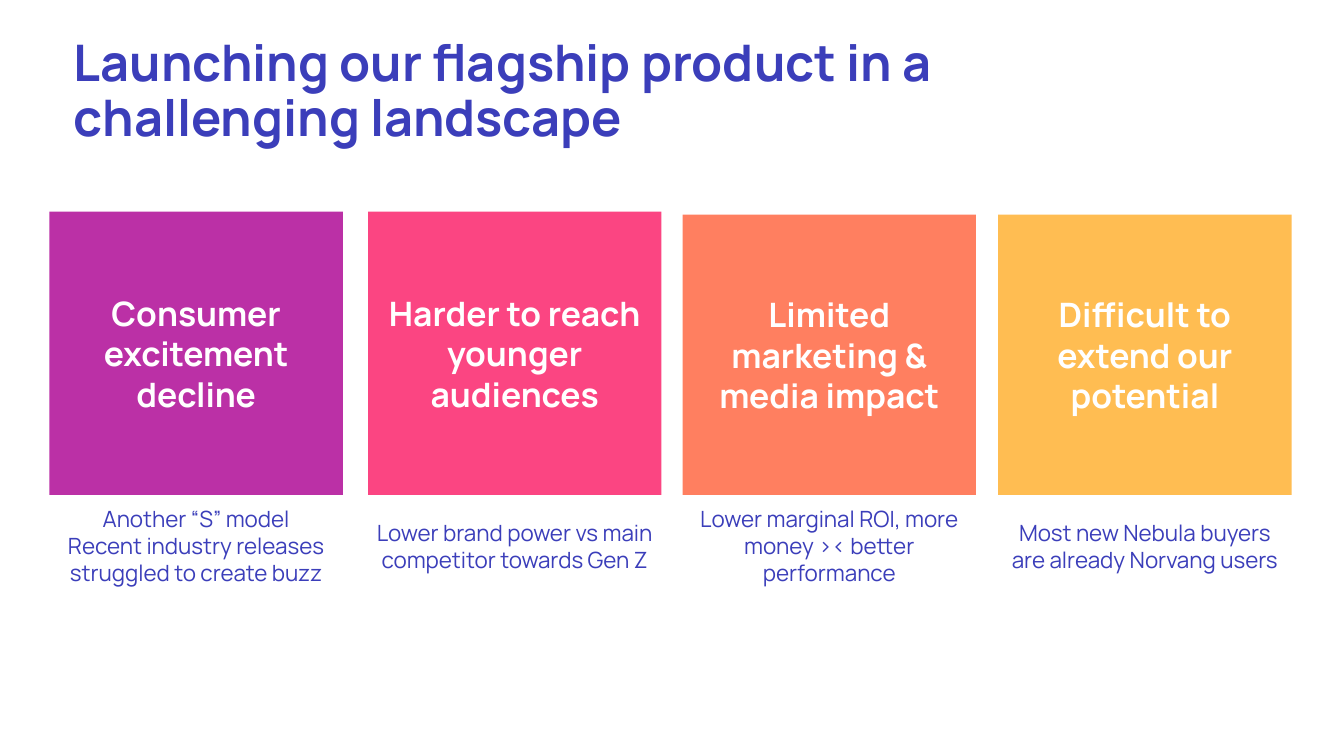
import pptx
import pptx.util
import pptx.dml.color
import pptx.enum.shapes
import pptx.enum.text

Inches = pptx.util.Inches
ALIGN = pptx.enum.text.PP_ALIGN
ANCHOR = pptx.enum.text.MSO_ANCHOR

COLORS = {
    "text": "3B3EBA",
    "white": "FFFFFF",
    "purple": "BB30A6",
    "pink": "FB4582",
    "coral": "FF7F60",
    "yellow": "FFBD52",
}

CARD_WIDTH = 2.91
CARD_BOTTOM = 4.91

# left, top, colour, heading, caption
CHALLENGES = [
    (0.49, 2.1, "purple", "Consumer excitement decline",
     "Another “S” model\nRecent industry releases struggled to create buzz"),
    (3.65, 2.1, "pink", "Harder to reach younger audiences",
     "Lower brand power vs main competitor towards Gen Z"),
    (6.77, 2.13, "coral", "Limited marketing & media impact",
     "Lower marginal ROI, more money >< better performance"),
    (9.9, 2.13, "yellow", "Difficult to extend our potential",
     "Most new Nebula buyers are already Norvang users"),
]


def rgb(name):
    return pptx.dml.color.RGBColor.from_string(COLORS[name])


class SlideBuilder:
    font = "Manrope"

    def __init__(self, slide):
        self.slide = slide

    def set_text(self, sp, text, size, color, bold=False, align=ALIGN.CENTER,
                 anchor=ANCHOR.MIDDLE):
        tf = sp.text_frame
        tf.text = text
        tf.word_wrap = True
        tf.vertical_anchor = anchor
        for p in tf.paragraphs:
            p.alignment = align
            for r in p.runs:
                r.font.name = self.font
                r.font.size = pptx.util.Pt(size)
                r.font.bold = bold
                r.font.color.rgb = rgb(color)

    def title(self, text, left, top, width, height):
        sp = self.slide.shapes.title
        sp.left, sp.top = Inches(left), Inches(top)
        sp.width, sp.height = Inches(width), Inches(height)
        self.set_text(sp, text, 36, "text", True, ALIGN.LEFT, ANCHOR.TOP)
        sp.text_frame.auto_size = pptx.enum.text.MSO_AUTO_SIZE.NONE
        sp.text_frame.paragraphs[0].line_spacing = 0.9

    def card(self, text, color, left, top, width, height):
        sp = self.slide.shapes.add_shape(
            pptx.enum.shapes.MSO_SHAPE.RECTANGLE,
            Inches(left), Inches(top), Inches(width), Inches(height))
        sp.shadow.inherit = False
        sp.fill.solid()
        sp.fill.fore_color.rgb = rgb(color)
        sp.line.fill.background()
        self.set_text(sp, text, 24, "white", True)

    def caption(self, text, left, top, width, height):
        sp = self.slide.shapes.add_textbox(
            Inches(left), Inches(top), Inches(width), Inches(height))
        self.set_text(sp, text, 16, "text")


def main():
    prs = pptx.Presentation()
    prs.slide_width, prs.slide_height = Inches(13.33), Inches(7.5)
    s = SlideBuilder(prs.slides.add_slide(prs.slide_layouts[5]))
    s.title("Launching our flagship product in a challenging landscape",
            0.63, 0.33, 11.62, 0.78)
    for left, top, color, heading, caption in CHALLENGES:
        s.card(heading, color, left, top, CARD_WIDTH, CARD_BOTTOM - top)
        s.caption(caption, left - 0.02, 4.96, CARD_WIDTH + 0.04, 0.91)
    prs.save("out.pptx")


if __name__ == "__main__":
    main()
